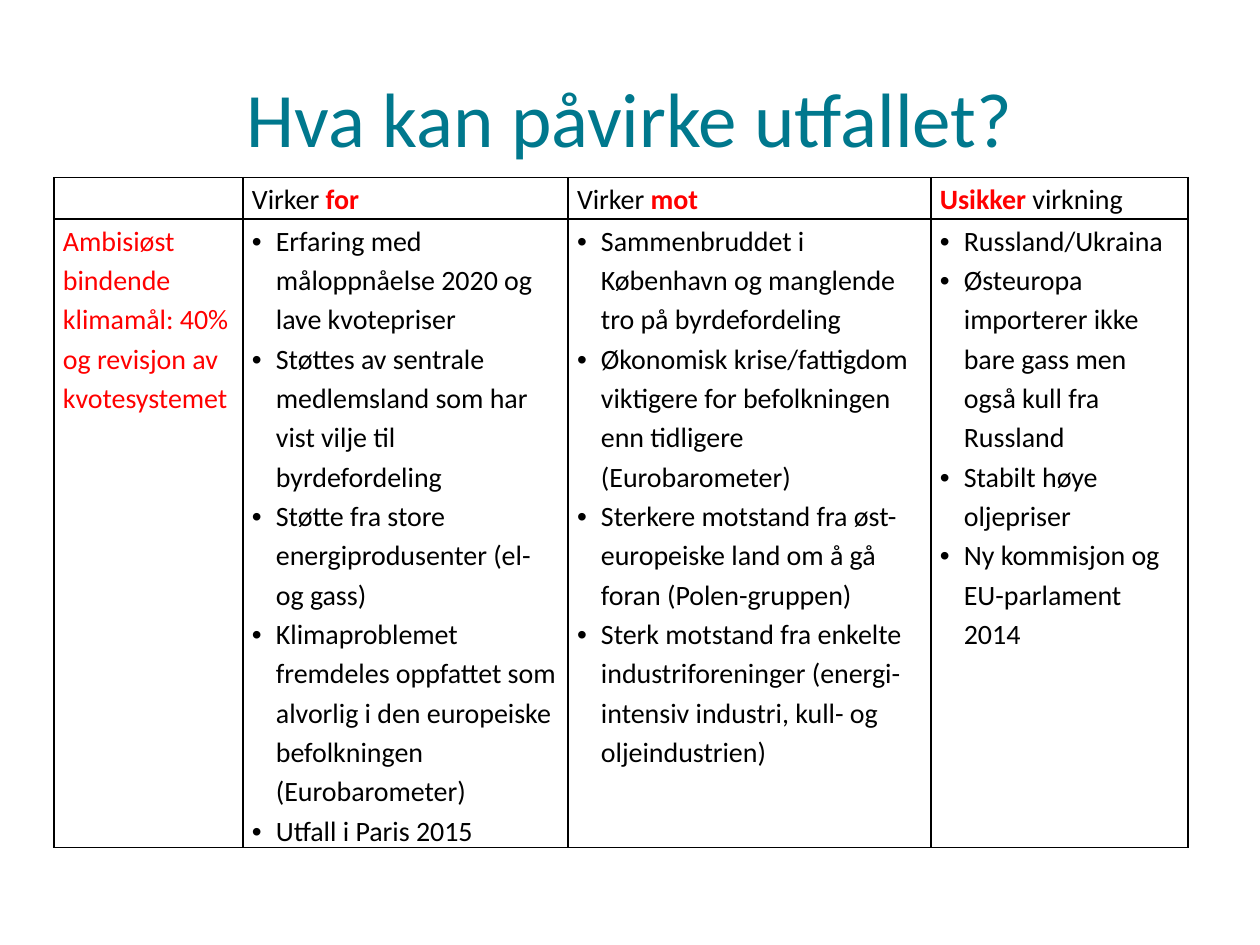
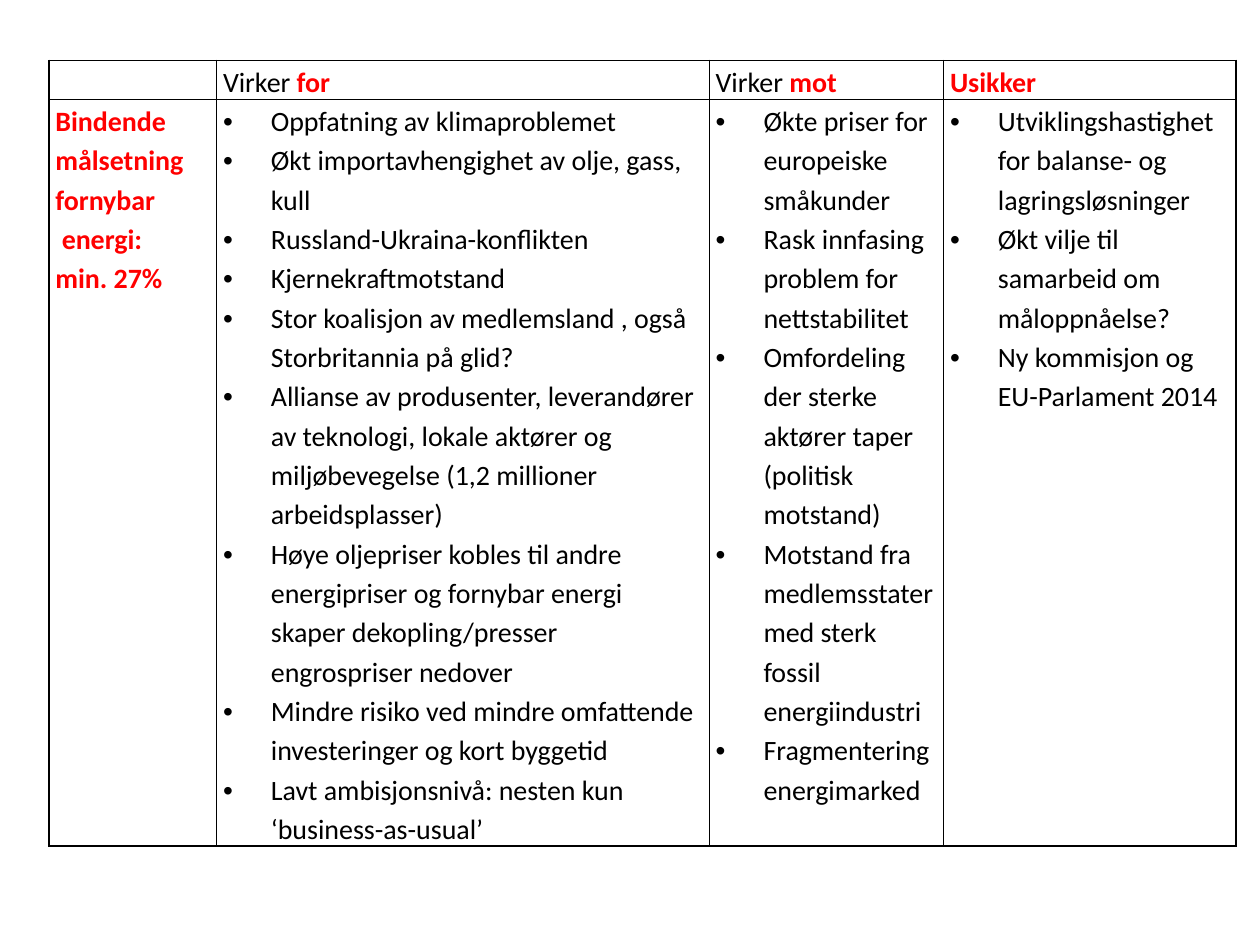
"""Build two slides of tables on what may affect the outcome of the climate targets."""
from dataclasses import dataclass

from lxml import etree
from pptx import Presentation
from pptx import util as u
from pptx.dml.color import RGBColor
from pptx.enum import text
from pptx.oxml import ns

COLOURS = {"title": "00788D", "body": "000000", "accent": "FF0000", "border": "000000"}
FONT = "Calibri"
TITLE_SIZE, BODY_SIZE = 44, 16
LINE_SPACING = 1.15
BORDER_WIDTH = u.Pt(1)
WIDTH, HEIGHT = u.Inches(10), u.Inches(7.5)


@dataclass(frozen=True)
class FactorTable:
    """A table placed in percent of the slide; text between asterisks is accented."""
    left: float
    top: float
    columns: tuple[float, ...]
    rows: tuple[float, ...]
    margin: float
    indent: float
    bold_target: bool
    headings: tuple[str, ...]
    target: tuple[str, ...]
    factors: tuple[tuple[str, ...], ...]


CLIMATE = FactorTable(
    left=4.3, top=18.8, columns=(15, 25.8, 28.8, 20.4), rows=(4.4, 66.5),
    margin=0.7, indent=1.9, bold_target=False,
    headings=("", "Virker *for*", "Virker *mot*", "*Usikker* virkning"),
    target=("Ambisiøst", "bindende", "klimamål: 40%", "og revisjon av kvotesystemet"),
    factors=(
        ("Erfaring med måloppnåelse 2020 og lave kvotepriser",
         "Støttes av sentrale medlemsland som har vist vilje til byrdefordeling",
         "Støtte fra store energiprodusenter (el- og gass)",
         "Klimaproblemet fremdeles oppfattet som alvorlig i den europeiske "
         "befolkningen (Eurobarometer)",
         "Utfall i Paris 2015"),
        ("Sammenbruddet i København og manglende tro på byrdefordeling",
         "Økonomisk krise/fattigdom viktigere for befolkningen enn tidligere (Eurobarometer)",
         "Sterkere motstand fra øst-europeiske land om å gå foran (Polen-gruppen)",
         "Sterk motstand fra enkelte industriforeninger (energi-intensiv industri, "
         "kull- og oljeindustrien)"),
        ("Russland/Ukraina",
         "Østeuropa importerer ikke bare gass men også kull fra Russland",
         "Stabilt høye oljepriser",
         "Ny kommisjon og EU-parlament 2014"),
    ),
)

RENEWABLES = FactorTable(
    left=3.9, top=6.4, columns=(13.3, 39.1, 18.6, 23.2), rows=(4.15, 79),
    margin=0.5, indent=3.8, bold_target=True,
    headings=("", "Virker *for*", "Virker *mot*", "*Usikker*"),
    target=("Bindende", "målsetning", "fornybar", " energi:", "min. 27%"),
    factors=(
        ("Oppfatning av klimaproblemet",
         "Økt importavhengighet av olje, gass, kull",
         "Russland-Ukraina-konflikten",
         "Kjernekraftmotstand",
         "Stor koalisjon av medlemsland , også Storbritannia på glid?",
         "Allianse av produsenter, leverandører av teknologi, lokale aktører og "
         "miljøbevegelse (1,2 millioner arbeidsplasser)",
         "Høye oljepriser kobles til andre energipriser og fornybar energi skaper "
         "dekopling/presser engrospriser nedover",
         "Mindre risiko ved mindre omfattende investeringer og kort byggetid",
         "Lavt ambisjonsnivå: nesten kun ‘business-as-usual’"),
        ("Økte priser for europeiske småkunder",
         "Rask innfasing problem for nettstabilitet",
         "Omfordeling der sterke aktører taper (politisk motstand)",
         "Motstand fra medlemsstater med sterk fossil energiindustri",
         "Fragmentering energimarked"),
        ("Utviklingshastighet for balanse- og lagringsløsninger",
         "Økt vilje til samarbeid om måloppnåelse?",
         "Ny kommisjon og EU-Parlament 2014"),
    ),
)


def across(percent: float) -> int:
    """Turn a share of the slide width into a length."""
    return round(WIDTH * percent / 100)


def down(percent: float) -> int:
    """Turn a share of the slide height into a length."""
    return round(HEIGHT * percent / 100)


def style_run(run, colour: str, size: float = BODY_SIZE, bold: bool = False) -> None:
    """Give a run the shared font and its own colour, size and weight."""
    run.font.name = FONT
    run.font.size = u.Pt(size)
    run.font.bold = bold
    run.font.color.rgb = RGBColor.from_string(COLOURS[colour])


def add_title(page, wording: str) -> None:
    """Add the centred slide title."""
    box = page.shapes.add_textbox(across(5), down(4), across(90), down(16.67))
    frame = box.text_frame
    frame.word_wrap = True
    frame.vertical_anchor = text.MSO_ANCHOR.MIDDLE
    frame.text = wording
    para = frame.paragraphs[0]
    para.alignment = text.PP_ALIGN.CENTER
    style_run(para.runs[0], "title", TITLE_SIZE)


def add_bullet(para, indent: float) -> None:
    """Give a paragraph a hanging round bullet."""
    properties = para._p.get_or_add_pPr()
    properties.set("marL", str(across(indent)))
    properties.set("indent", str(-across(indent)))
    etree.SubElement(properties, ns.qn("a:buFont"), typeface="Arial")
    etree.SubElement(properties, ns.qn("a:buChar"), char="•")


def frame_cell(cell, margin: float) -> None:
    """Clear a cell's fill, set its margins and draw its four borders."""
    cell.margin_left = cell.margin_right = across(margin)
    cell.margin_top = cell.margin_bottom = 0
    cell.fill.background()
    properties = cell._tc.get_or_add_tcPr()
    for position, side in enumerate(("lnL", "lnR", "lnT", "lnB")):
        line = etree.Element(ns.qn(f"a:{side}"), w=str(BORDER_WIDTH))
        fill = etree.SubElement(line, ns.qn("a:solidFill"))
        etree.SubElement(fill, ns.qn("a:srgbClr"), val=COLOURS["border"])
        properties.insert(position, line)


def write_heading(cell, wording: str) -> None:
    """Write a column heading with its marked word accented."""
    para = cell.text_frame.paragraphs[0]
    para.line_spacing = LINE_SPACING
    for position, part in enumerate(wording.split("*")):
        if part:
            marked = position % 2 == 1
            span = para.add_run()
            span.text = part
            style_run(span, "accent" if marked else "body", bold=marked)


def write_lines(cell, lines: tuple[str, ...], colour: str,
                bold: bool = False, indent: float = 0) -> None:
    """Write one paragraph per line, bulleted where an indent is given."""
    cell.text_frame.text = "\n".join(lines)
    for para in cell.text_frame.paragraphs:
        if indent:
            add_bullet(para, indent)
        para.line_spacing = LINE_SPACING
        style_run(para.runs[0], colour, bold=bold)


def add_factor_table(page, layout: FactorTable) -> None:
    """Draw a table of the factors around one target."""
    table = page.shapes.add_table(
        len(layout.rows), len(layout.columns), across(layout.left), down(layout.top),
        across(sum(layout.columns)), down(sum(layout.rows))).table
    table.first_row = table.horz_banding = False
    for column, share in zip(table.columns, layout.columns):
        column.width = across(share)
    for row, share in zip(table.rows, layout.rows):
        row.height = down(share)
    for cell in table.iter_cells():
        frame_cell(cell, layout.margin)
    for column, heading in enumerate(layout.headings):
        write_heading(table.cell(0, column), heading)
    write_lines(table.cell(1, 0), layout.target, "accent", bold=layout.bold_target)
    for column, lines in enumerate(layout.factors, start=1):
        write_lines(table.cell(1, column), lines, "body", indent=layout.indent)


def main() -> None:
    """Build and save the deck."""
    deck = Presentation()
    deck.slide_width, deck.slide_height = WIDTH, HEIGHT
    blank = deck.slide_layouts[6]
    climate_page, renewables_page = (deck.slides.add_slide(blank) for _ in range(2))
    add_title(climate_page, "Hva kan påvirke utfallet?")
    add_factor_table(climate_page, CLIMATE)
    add_factor_table(renewables_page, RENEWABLES)
    deck.save("out.pptx")


if __name__ == "__main__":
    main()
